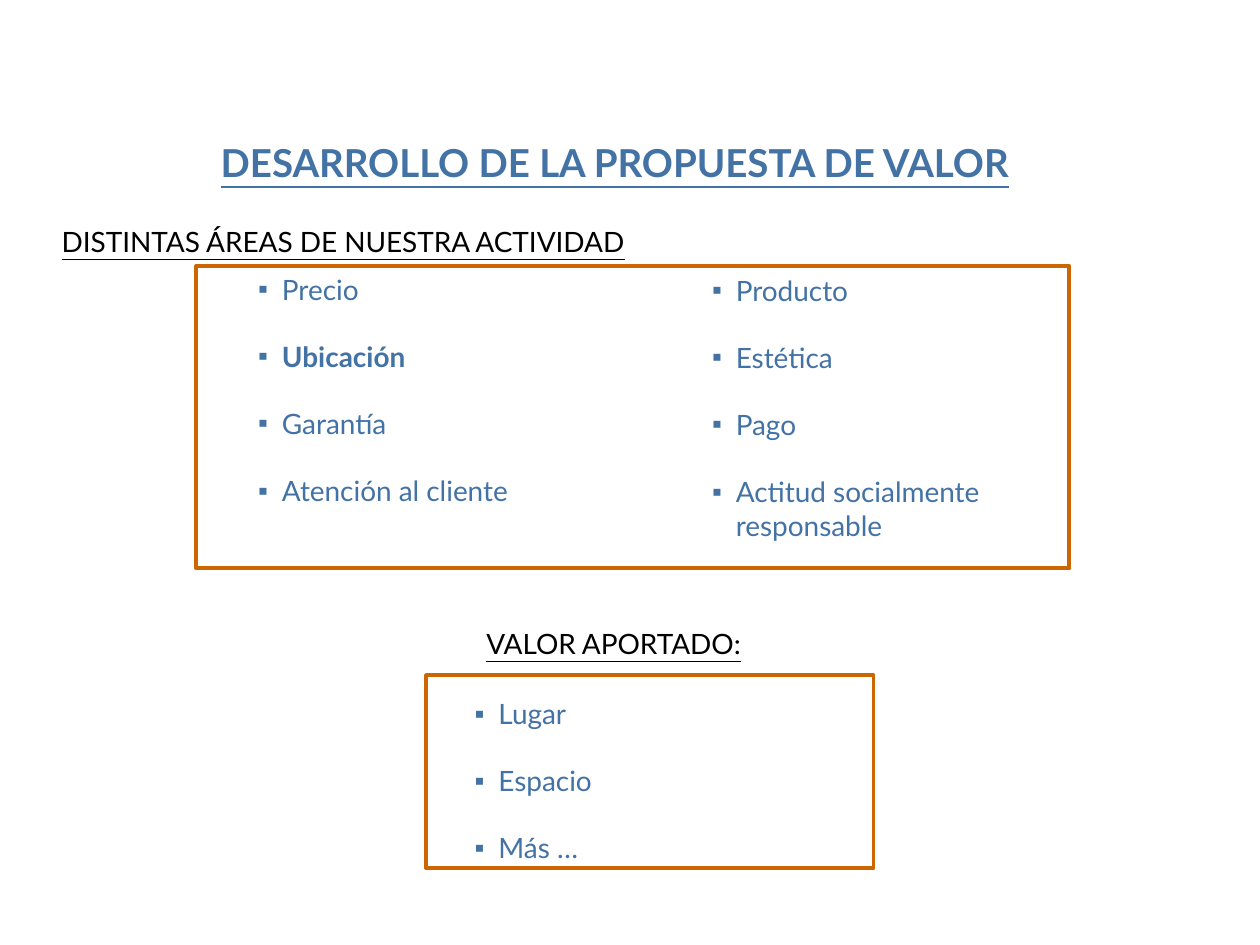
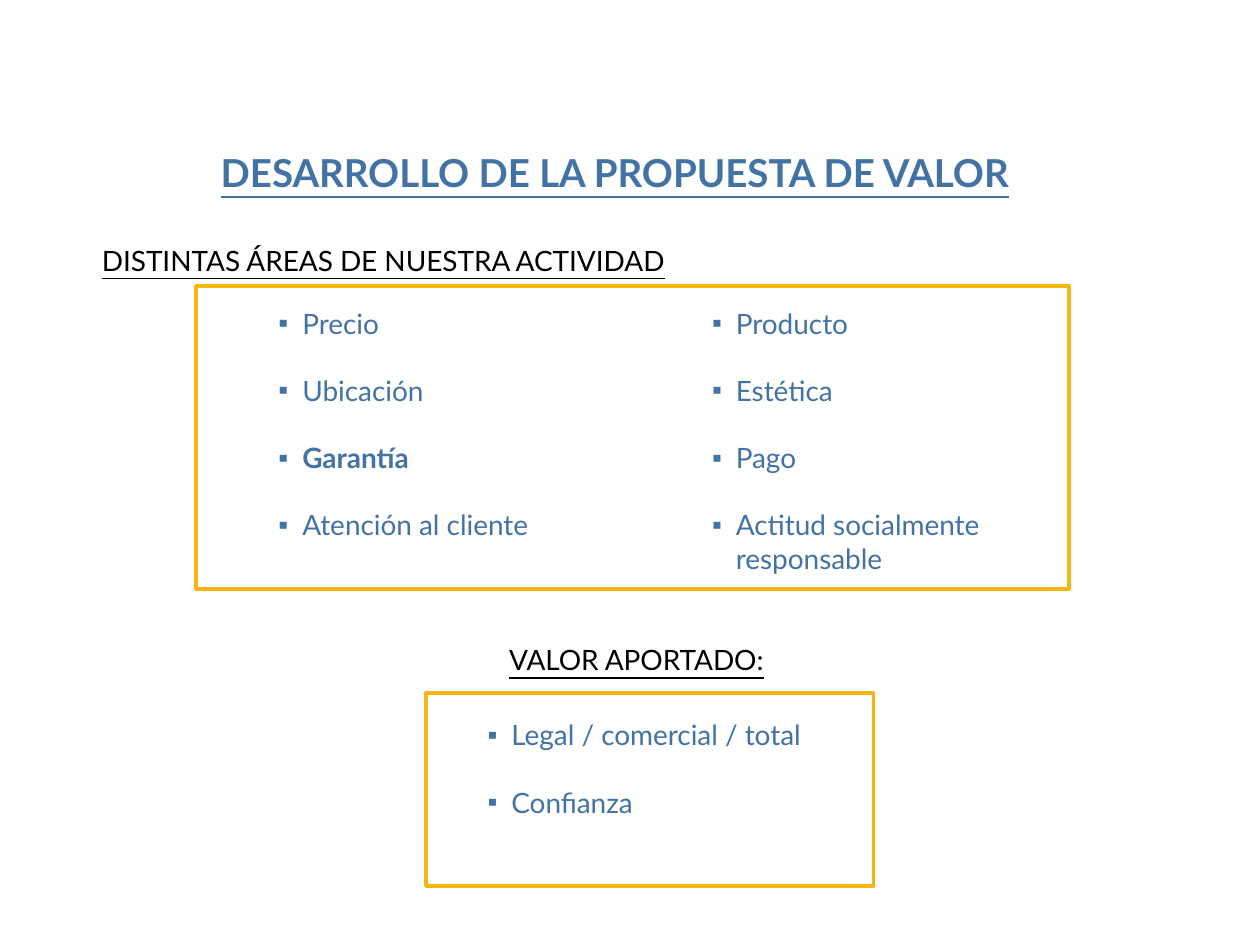
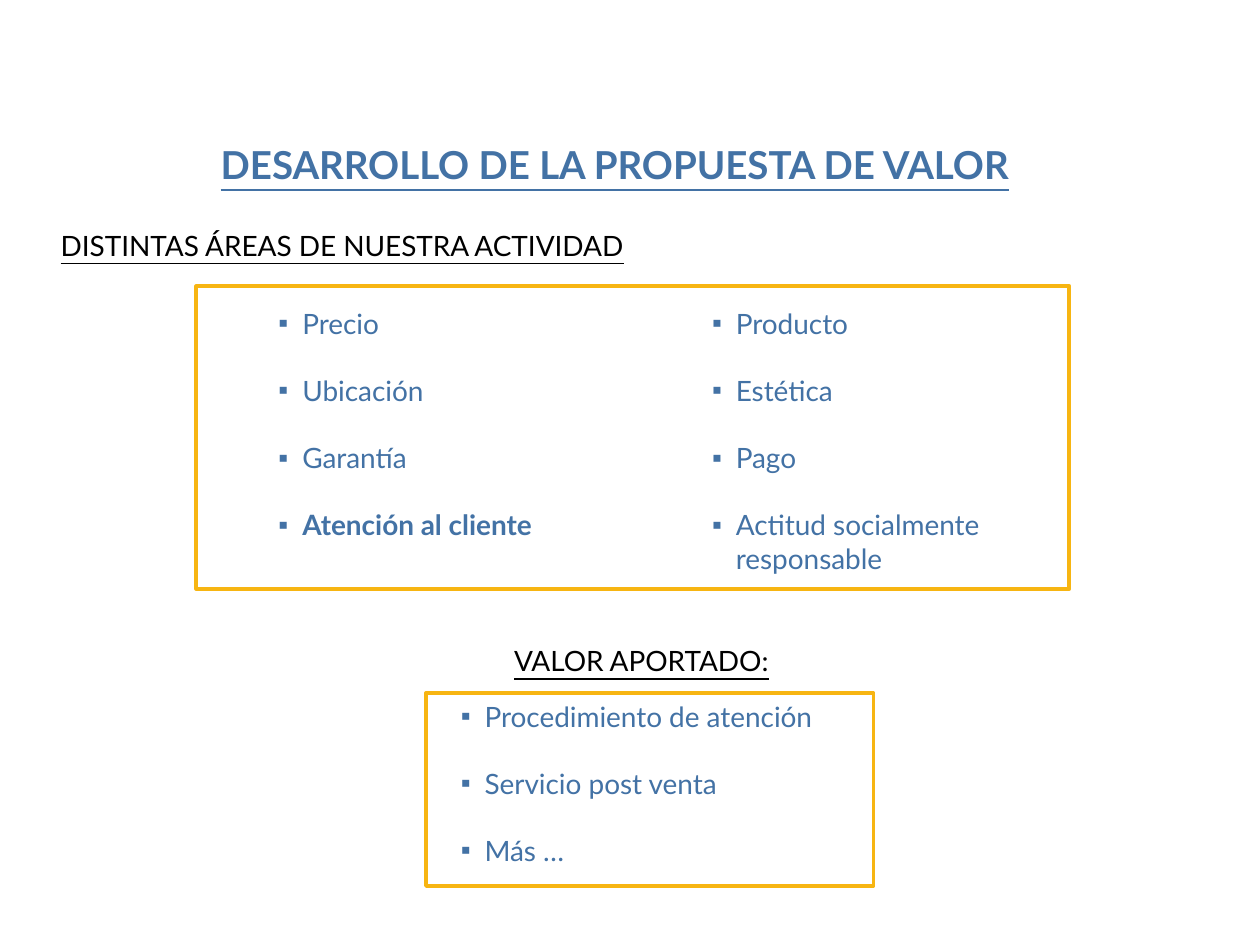
"""Build three slides that develop a value proposition."""
from lxml import etree
from pptx import Presentation, util as u
from pptx.dml.color import RGBColor
from pptx.enum import shapes, text
from pptx.oxml.ns import qn

BLUE, BLACK, ORANGE, YELLOW = "4372A5", "000000", "CC6600", "F7B512"
FONT = "Lato"
COMPARISON_LAYOUT = 4
LEFT_AREAS = ["Precio", "Ubicación", "Garantía", "Atención al cliente"]
RIGHT_AREAS = ["Producto", "Estética", "Pago", "Actitud socialmente responsable"]

SLIDES = [
    dict(accent=ORANGE, title_top=2.67, areas_heading=(0.99, 4.39),
         areas_top=5.36, left_list=(4.95, 5.36), right_list=(14.1, 5.38),
         strong="Ubicación", value_heading=(9.55, 12.5), value_top=13.61,
         value_list=(9.32, 13.92, 5.94, 4.52),
         values=["Lugar", "Espacio", "Más …"]),
    dict(accent=YELLOW, title_top=2.87, areas_heading=(1.8, 4.78),
         areas_top=5.77, left_list=(5.36, 6.05), right_list=(14.1, 6.05),
         strong="Garantía", value_heading=(10.01, 12.83), value_top=13.97,
         value_list=(9.58, 14.35, 11.99, 3.18),
         values=["Legal / comercial / total", "Confianza"]),
    dict(accent=YELLOW, title_top=2.72, areas_heading=(0.97, 4.47),
         areas_top=5.77, left_list=(5.36, 6.05), right_list=(14.1, 6.05),
         strong="Atención al cliente", value_heading=(10.11, 12.85), value_top=13.97,
         value_list=(9.04, 13.97, 8.84, 4.52),
         values=["Procedimiento de atención", "Servicio post venta", "Más …"]),
]


def rgb(value):
    """Turn a hex string into a colour."""
    return RGBColor.from_string(value)


def place(holder, left, top, width, height):
    """Move and size a shape, in centimetres."""
    holder.left, holder.top = u.Cm(left), u.Cm(top)
    holder.width, holder.height = u.Cm(width), u.Cm(height)


def add_bullet(paragraph, color):
    """Give a paragraph a small square bullet with a hanging indent."""
    props = paragraph._p.get_or_add_pPr()
    indent = u.Cm(0.48)
    props.set("marL", str(indent))
    props.set("indent", str(-indent))
    bullet_color = etree.SubElement(props, qn("a:buClr"))
    etree.SubElement(bullet_color, qn("a:srgbClr"), val=color)
    etree.SubElement(props, qn("a:buFont"), typeface="Arial")
    etree.SubElement(props, qn("a:buChar"), char="▪")


def write(holder, lines, size=16, color=BLUE, bold=False, underline=False,
          align=text.PP_ALIGN.LEFT, bullets=False, gap=0, strong=None):
    """Fill a shape with formatted paragraphs."""
    frame = holder.text_frame
    frame.word_wrap = True
    frame.auto_size = text.MSO_AUTO_SIZE.NONE
    frame.vertical_anchor = text.MSO_ANCHOR.TOP
    for number, line in enumerate(lines):
        paragraph = frame.add_paragraph() if number else frame.paragraphs[0]
        paragraph.alignment = align
        paragraph.space_before, paragraph.space_after = u.Pt(0), u.Pt(gap)
        if bullets:
            add_bullet(paragraph, color)
        run = paragraph.add_run()
        run.text = line
        run.font.name, run.font.size = FONT, u.Pt(size)
        run.font.color.rgb = rgb(color)
        run.font.bold = bold or line == strong
        run.font.underline = underline


def fill_heading(holder, wording, position, width):
    """Write an underlined section heading."""
    place(holder, *position, width, 0.95)
    write(holder, [wording], color=BLACK, underline=True)


def fill_list(holder, items, box, strong=None):
    """Write a list of spaced square bullets."""
    place(holder, *box)
    write(holder, items, bullets=True, gap=19.2, strong=strong)


def add_frame(slide, accent, left, top, width, height):
    """Draw an unfilled rectangle with a coloured outline."""
    frame = slide.shapes.add_shape(
        shapes.MSO_SHAPE.RECTANGLE, *map(u.Cm, (left, top, width, height)))
    frame.shadow.inherit = False
    frame.fill.background()
    frame.line.color.rgb = rgb(accent)
    frame.line.width = u.Pt(2.25)


def add_proposal(deck, content):
    """Add one slide: areas of activity and the value they bring."""
    slide = deck.slides.add_slide(deck.slide_layouts[COMPARISON_LAYOUT])
    title, areas_heading, left_list, value_heading, right_list = slide.placeholders

    place(title, 0.89, content["title_top"], 23.01, 1.6)
    write(title, ["DESARROLLO DE LA PROPUESTA DE VALOR"], size=22, bold=True,
          underline=True, align=text.PP_ALIGN.CENTER)

    fill_heading(areas_heading, "DISTINTAS ÁREAS DE NUESTRA ACTIVIDAD",
                 content["areas_heading"], 15.24)
    fill_list(left_list, LEFT_AREAS, (*content["left_list"], 7.34, 6.58),
              strong=content["strong"])
    fill_list(right_list, RIGHT_AREAS, (*content["right_list"], 8.61, 6.58))
    add_frame(slide, content["accent"], 3.96, content["areas_top"], 17.6, 6.1)

    fill_heading(value_heading, "VALOR APORTADO:", content["value_heading"], 7.5)
    value_list = slide.shapes.add_textbox(0, 0, 0, 0)
    fill_list(value_list, content["values"], content["value_list"])
    add_frame(slide, content["accent"], 8.59, content["value_top"], 9.02, 3.89)


def main():
    """Build the deck and save it."""
    deck = Presentation()
    deck.slide_width, deck.slide_height = u.Cm(25.4), u.Cm(19.05)
    for content in SLIDES:
        add_proposal(deck, content)
    deck.save("out.pptx")


if __name__ == "__main__":
    main()
